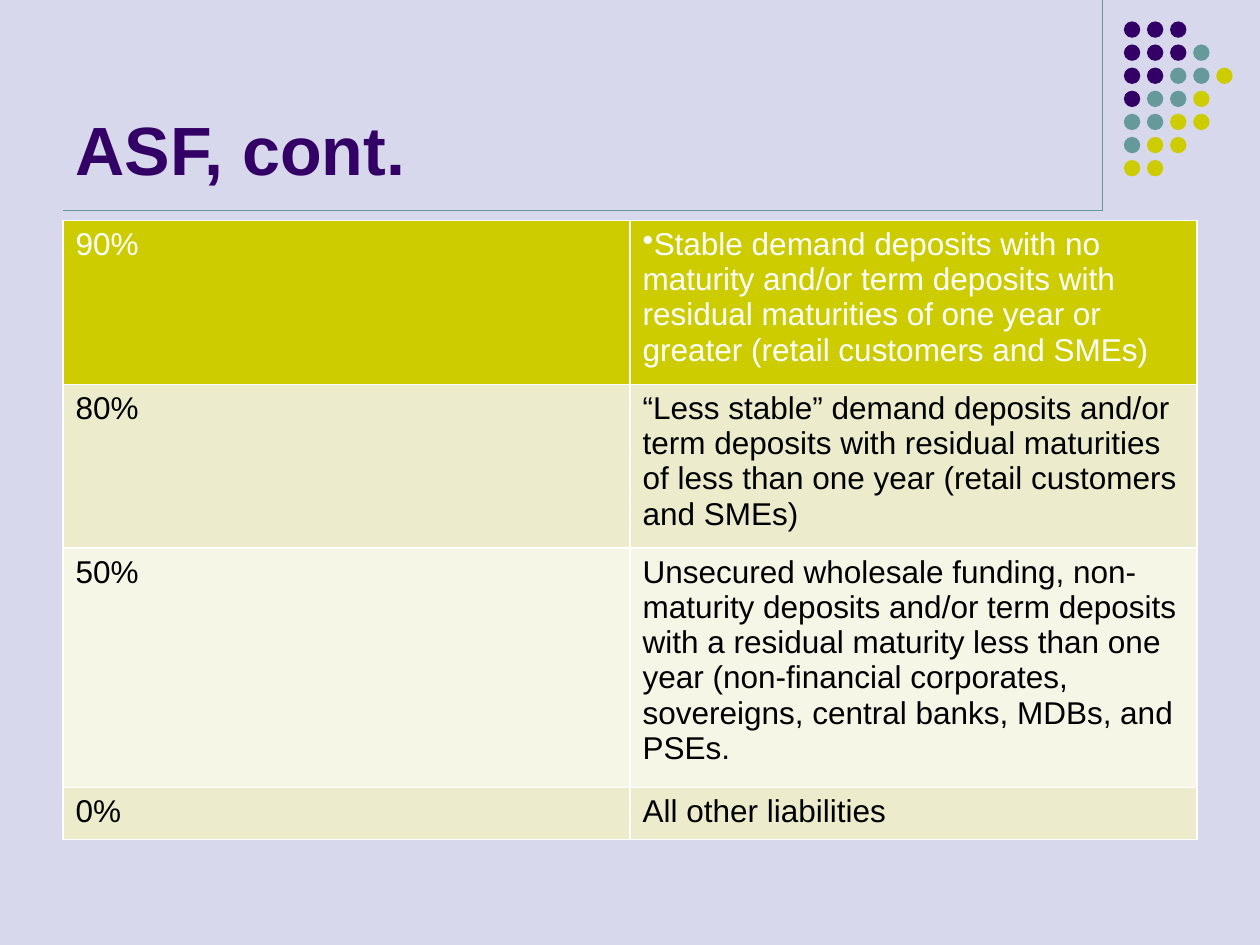
from typing import NamedTuple

from lxml import etree
from pptx import Presentation
from pptx.dml.color import RGBColor
from pptx.enum.shapes import MSO_CONNECTOR, MSO_SHAPE
from pptx.enum.text import MSO_ANCHOR
from pptx.oxml.ns import qn
from pptx.util import Inches, Pt

STRAIGHT = MSO_CONNECTOR.STRAIGHT
OVAL = MSO_SHAPE.OVAL
BOTTOM = MSO_ANCHOR.BOTTOM

BACKGROUND = RGBColor(0xD8, 0xD8, 0xEC)
PURPLE = RGBColor(0x33, 0x00, 0x66)
TEAL = RGBColor(0x66, 0x99, 0x99)
YELLOW = RGBColor(0xCC, 0xCC, 0x00)
BAND_DARK = RGBColor(0xEC, 0xEC, 0xCC)
BAND_LIGHT = RGBColor(0xF6, 0xF6, 0xE7)
WHITE = RGBColor(0xFF, 0xFF, 0xFF)
BLACK = RGBColor(0x00, 0x00, 0x00)

FONT = "Arial"
DOT_COLORS = {"P": PURPLE, "T": TEAL, "Y": YELLOW}
DOT_ROWS = ("PPP", "PPPT", "PPTTY", "PTTY", "TTYY", "TYY", "YY")
DOT_LEFT, DOT_TOP, DOT_SIZE = 8.92, 0.17, 0.13
DOT_PITCH = 1.1 / 6


class FundingRow(NamedTuple):
    factor: str
    category: str
    fill: RGBColor
    color: RGBColor = BLACK
    bullet: bool = False


FUNDING_ROWS = (
    FundingRow("90%", "Stable demand deposits with no maturity and/or term deposits with "
               "residual maturities of one year or greater (retail customers and SMEs)",
               YELLOW, WHITE, bullet=True),
    FundingRow("80%", "“Less stable” demand deposits and/or term deposits with residual "
               "maturities of less than one year (retail customers and SMEs)", BAND_DARK),
    FundingRow("50%", "Unsecured wholesale funding, non-maturity deposits and/or term deposits "
               "with a residual maturity less than one year (non-financial corporates, "
               "sovereigns, central banks, MDBs, and PSEs.", BAND_LIGHT),
    FundingRow("0%", "All other liabilities", BAND_DARK),
)


def write_text(text_frame, text: str, *, size: float, color: RGBColor,
               bold: bool = False, bullet: bool = False) -> None:
    text_frame.word_wrap = True
    paragraph = text_frame.paragraphs[0]
    run = paragraph.add_run()
    run.text = text
    run.font.name = FONT
    run.font.size = Pt(size)
    run.font.bold = bold
    run.font.color.rgb = color
    if bullet:
        properties = paragraph._p.get_or_add_pPr()
        properties.set("marL", "0")
        properties.set("indent", "0")
        etree.SubElement(properties, qn("a:buChar"), char="•")


def add_rule(slide, x1: float, y1: float, x2: float, y2: float) -> None:
    line = slide.shapes.add_connector(STRAIGHT, Inches(x1), Inches(y1), Inches(x2), Inches(y2))
    line.line.color.rgb = TEAL
    line.line.width = Pt(0.75)
    etree.SubElement(line._element.spPr, qn("a:effectLst"))


def add_dot(group, column: int, row: int, color: RGBColor) -> None:
    dot = group.shapes.add_shape(
        OVAL, Inches(DOT_LEFT + column * DOT_PITCH), Inches(DOT_TOP + row * DOT_PITCH),
        Inches(DOT_SIZE), Inches(DOT_SIZE))
    dot.shadow.inherit = False
    dot.fill.solid()
    dot.fill.fore_color.rgb = color
    dot.line.fill.background()


def fill_cell(cell, text: str, row: FundingRow, bullet: bool = False) -> None:
    write_text(cell.text_frame, text, size=18, color=row.color, bullet=bullet)
    # Borders come before the fill in the cell properties
    properties = cell._tc.get_or_add_tcPr()
    for side in ("a:lnL", "a:lnR", "a:lnT", "a:lnB"):
        border = etree.SubElement(properties, qn(side), w=str(Pt(1)))
        solid = etree.SubElement(border, qn("a:solidFill"))
        etree.SubElement(solid, qn("a:srgbClr"), val=str(WHITE))
    cell.fill.solid()
    cell.fill.fore_color.rgb = row.fill


def main() -> None:
    presentation = Presentation()
    presentation.slide_width = Inches(10)
    presentation.slide_height = Inches(7.5)
    slide = presentation.slides.add_slide(presentation.slide_layouts[6])
    slide.background.fill.solid()
    slide.background.fill.fore_color.rgb = BACKGROUND

    # Corner rules and dot pattern
    add_rule(slide, 8.75, 0, 8.75, 1.67)
    dots = slide.shapes.add_group_shape()
    for row, codes in enumerate(DOT_ROWS):
        for column, code in enumerate(codes):
            add_dot(dots, column, row, DOT_COLORS[code])
    add_rule(slide, 0.5, 1.67, 8.75, 1.67)

    # Title
    title = slide.shapes.add_textbox(Inches(0.5), Inches(0.13), Inches(8.25), Inches(1.42))
    title.text_frame.vertical_anchor = BOTTOM
    write_text(title.text_frame, "ASF, cont.", size=39, color=PURPLE, bold=True)

    # Funding factors: rows grow to fit their text
    row_height = Inches(0.41)
    table = slide.shapes.add_table(len(FUNDING_ROWS), 2, Inches(0.5), Inches(1.75),
                                   Inches(9), row_height * len(FUNDING_ROWS)).table
    for index, row in enumerate(FUNDING_ROWS):
        table.rows[index].height = row_height
        fill_cell(table.cell(index, 0), row.factor, row)
        fill_cell(table.cell(index, 1), row.category, row, bullet=row.bullet)

    presentation.save("out.pptx")


if __name__ == "__main__":
    main()
